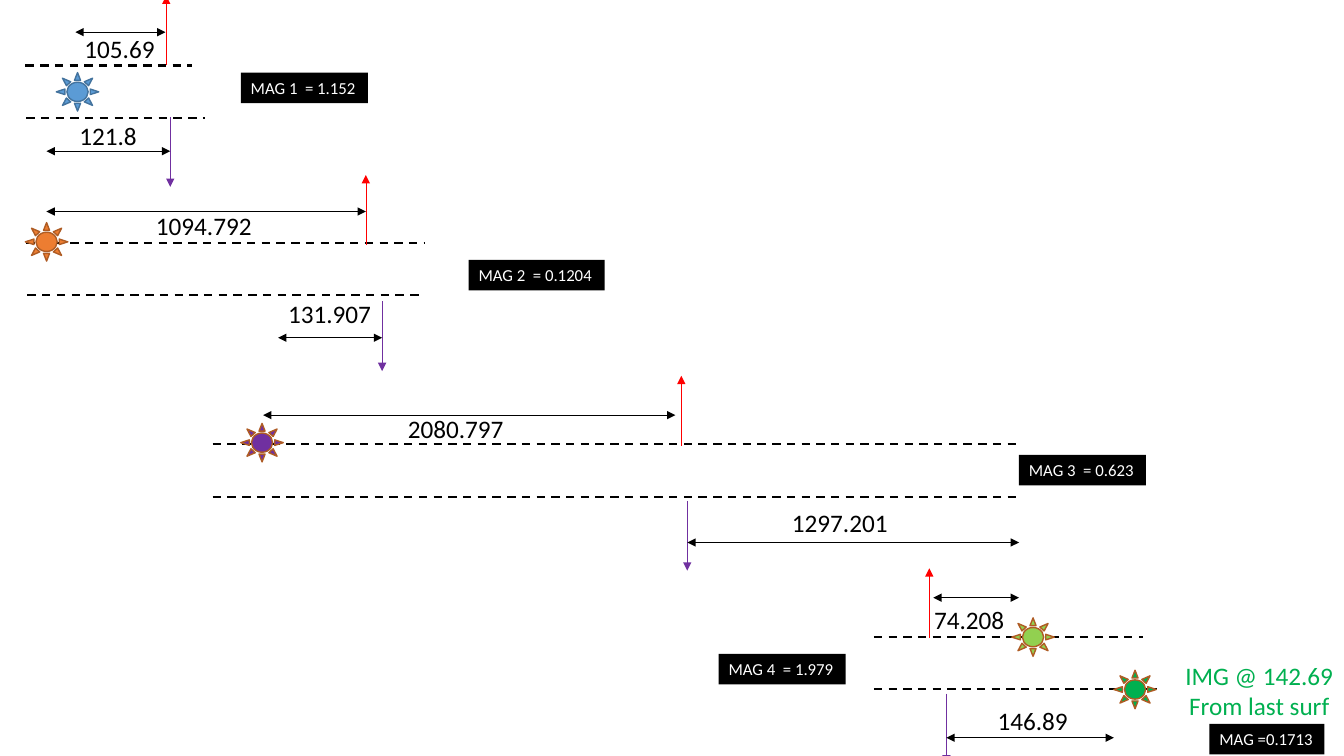
"""Build a slide of four lens stages with their distances and magnifications."""
import pptx
import pptx.dml.color
import pptx.enum.dml
import pptx.enum.shapes
import pptx.enum.text
import pptx.oxml
import pptx.oxml.ns
import pptx.util

Cm = pptx.util.Cm
COLOURS = {
    "black": "000000", "white": "FFFFFF", "red": "FF0000", "purple": "7030A0",
    "blue": "5B9BD5", "dark blue": "43739E", "orange": "ED7D31",
    "brown": "AF5C24", "lime": "92D050", "green": "00B050",
}
RGB = {name: pptx.dml.color.RGBColor.from_string(value) for name, value in COLOURS.items()}
SURFACE_GAP = 1.32
ARROW_LENGTH = 1.76

presentation = pptx.Presentation()
presentation.slide_width = Cm(33.87)
presentation.slide_height = Cm(19.05)
slide = presentation.slides.add_slide(presentation.slide_layouts[6])


def add_line(start, end, colour="black", width=0.5, dashed=False, arrows=()):
    """Draw a straight line, with arrowheads at the named ends."""
    line = slide.shapes.add_connector(
        pptx.enum.shapes.MSO_CONNECTOR.STRAIGHT, *map(Cm, start + end))
    line.line.color.rgb = RGB[colour]
    line.line.width = pptx.util.Pt(width)
    if dashed:
        line.line.dash_style = pptx.enum.dml.MSO_LINE.DASH
    outline = line.line._get_or_add_ln()
    for arrow in arrows:
        pptx.oxml.ns.qn("a:" + arrow)
        head = outline.makeelement(pptx.oxml.ns.qn("a:" + arrow), {"type": "triangle"})
        outline.append(head)
    properties = outline.getparent()
    properties.append(properties.makeelement(pptx.oxml.ns.qn("a:effectLst"), {}))


def add_text(text, left, top, width, height, size=18, colour="black", fill=None, centred=False):
    """Place text in an unwrapped box, filled if a fill is named."""
    box = slide.shapes.add_textbox(Cm(left), Cm(top), Cm(width), Cm(height))
    if fill:
        box.fill.solid()
        box.fill.fore_color.rgb = RGB[fill]
    frame = box.text_frame
    frame.word_wrap = False
    frame.auto_size = pptx.enum.text.MSO_AUTO_SIZE.SHAPE_TO_FIT_TEXT
    frame.text = text
    for paragraph in frame.paragraphs:
        if centred:
            paragraph.alignment = pptx.enum.text.PP_ALIGN.CENTER
        font = paragraph.runs[0].font
        font.name = "Calibri"
        font.size = pptx.util.Pt(size)
        font.color.rgb = RGB[colour]


lenses = [
    {"top": 1.65, "front": (0.64, 4.85), "back": (0.66, 5.16),
     "red": (4.19, 1.65), "purple": (4.29, 2.95)},
    {"top": 6.12, "front": (0.66, 10.69), "back": (0.69, 10.69),
     "red": (9.22, 6.17), "purple": (9.63, 7.59)},
    {"top": 11.2, "front": (5.36, 25.68), "back": (5.36, 25.68),
     "red": (17.17, 11.23), "purple": (17.32, 12.62)},
    {"top": 16.05, "front": (22.02, 28.8), "back": (22.02, 29.16),
     "red": (23.42, 16.08), "purple": (23.85, 17.48)},
]
for lens in lenses:
    for surface, y in (("front", lens["top"]), ("back", lens["top"] + SURFACE_GAP)):
        left, right = lens[surface]
        add_line((left, y), (right, y), width=1.5, dashed=True)
    for colour, direction in (("red", -1), ("purple", 1)):
        x, y = lens[colour]
        add_line((x, y), (x, y + direction * ARROW_LENGTH), colour, arrows=["tailEnd"])

suns = [
    (1.42, 1.83, "blue", "dark blue"),
    (0.64, 5.61, "orange", "brown"),
    (6.07, 10.67, "purple", "brown"),
    (25.5, 15.57, "lime", "brown"),
    (28.07, 16.89, "green", "brown"),
]
for left, top, fill, outline in suns:
    sun = slide.shapes.add_shape(
        pptx.enum.shapes.MSO_SHAPE.SUN, Cm(left), Cm(top), Cm(1.07), Cm(0.97))
    sun.shadow.inherit = False
    sun.fill.solid()
    sun.fill.fore_color.rgb = RGB[fill]
    sun.line.color.rgb = RGB[outline]
    sun.line.width = pptx.util.Pt(1)

distances = [
    ("105.69", (1.9, 4.17, 0.81), (1.88, 0.71, 2.29)),
    ("121.8", (1.17, 4.29, 3.81), (1.75, 2.9, 1.98)),
    ("1094.792", (1.17, 9.22, 5.33), (3.68, 5.18, 2.95)),
    ("131.907", (7.01, 9.63, 8.51), (7.01, 7.39, 2.62)),
    ("2080.797", (6.63, 17.02, 10.46), (10.03, 10.29, 2.95)),
    ("1297.201", (17.32, 25.68, 13.67), (19.71, 12.65, 2.95)),
    ("74.208", (23.52, 25.68, 15.06), (23.29, 15.11, 2.29)),
    ("146.89", (23.85, 28.07, 18.59), (24.89, 17.65, 2.29)),
]
for distance, (left, right, y), label in distances:
    add_line((left, y), (right, y), arrows=["headEnd", "tailEnd"])
    add_text(distance, *label, height=1.03)

add_text("IMG @ 142.69\nFrom last surf", 29.59, 16.51, 4.29, 1.8, colour="green", centred=True)

magnifications = [
    ("MAG 1  = 1.152", 6.07, 1.83, 3.2),
    ("MAG 2  = 0.1204", 11.81, 6.55, 3.43),
    ("MAG 3  = 0.623", 25.68, 11.46, 3.2),
    ("MAG 4  = 1.979", 18.11, 16.48, 3.2),
    ("MAG =0.1713", 30.48, 18.24, 2.9),
]
for magnification in magnifications:
    add_text(*magnification, height=0.77, size=12, colour="white", fill="black")

presentation.save("out.pptx")
